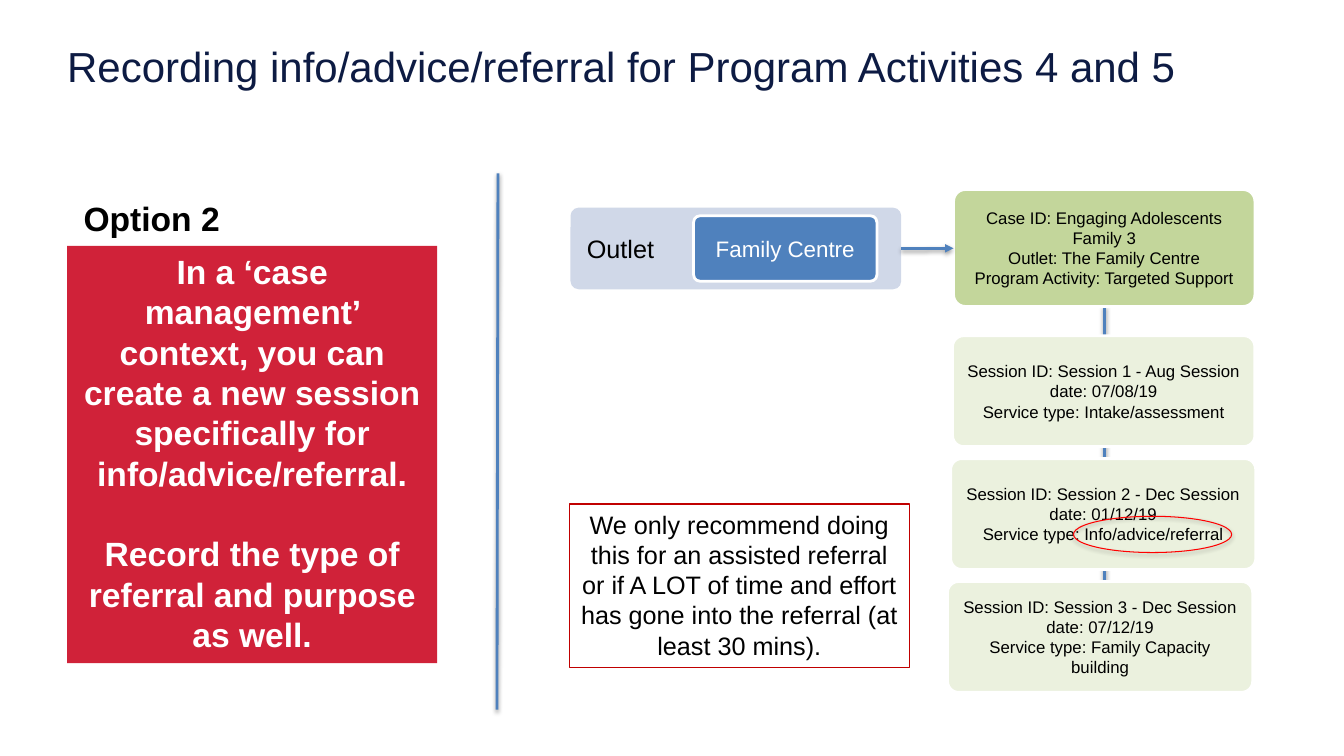
from lxml.etree import SubElement
from pptx import Presentation
from pptx.dml.color import RGBColor
from pptx.enum.shapes import MSO_CONNECTOR as CONN, MSO_SHAPE as SHAPE
from pptx.enum.text import MSO_ANCHOR as ANCHOR, PP_ALIGN as ALIGN
from pptx.oxml.ns import qn
from pptx.util import Pt

TITLE = "Recording info/advice/referral for Program Activities 4 and 5"
OPTION = "Option 2"
ADVICE = [
    "In a ‘case management’ context, you can create a new session specifically for info/advice/referral.",
    "Record the type of referral and purpose as well.",
]
NOTE = ["We only recommend doing this for an assisted referral or if A LOT of time and effort "
        "has gone into the referral (at least 30 mins)."]
CASE = ["Case ID: Engaging Adolescents Family 3", "Outlet: The Family Centre",
        "Program Activity: Targeted Support"]
SESSIONS = [
    (680.4, 216, ["Session ID: Session 1 - Aug Session date: 07/08/19",
                  "Service type: Intake/assessment"]),
    (679, 218, ["Session ID: Session 2 - Dec Session date: 01/12/19",
                "Service type: Info/advice/referral"]),
    (676.8, 218, ["Session ID: Session 3 - Dec Session date: 07/12/19",
                  "Service type: Family Capacity building"]),
]
SESSION_TOP, SESSION_STEP, SESSION_H = 239.8, 87.8, 79.2
BLUE, WHITE, BLACK = "4F81BD", "FFFFFF", "000000"
INSETS = (7.2, 3.6)


def rgb(value):
    return RGBColor.from_string(value)


def write(sp, lines, size, color=BLACK, bold=False, align=ALIGN.CENTER,
          anchor=ANCHOR.MIDDLE, insets=INSETS, gap=0):
    tf = sp.text_frame
    tf.word_wrap = True
    tf.vertical_anchor = anchor
    tf.margin_left = tf.margin_right = Pt(insets[0])
    tf.margin_top = tf.margin_bottom = Pt(insets[1])
    for i, line in enumerate(lines):
        p = tf.paragraphs[0] if i == 0 else tf.add_paragraph()
        p.text = line
        p.alignment = align
        if i and gap:
            p.space_before = Pt(gap)
        p.font.name = "Arial"
        p.font.size = Pt(size)
        p.font.bold = bold
        p.font.color.rgb = rgb(color)


def add_text(box, lines, size, **style):
    sp = s.shapes.add_textbox(*map(Pt, box))
    write(sp, lines, size, anchor=ANCHOR.TOP, align=ALIGN.LEFT, **style)


def add_box(kind, box, fill=None, line=None, width=2):
    sp = s.shapes.add_shape(kind, *map(Pt, box))
    sp.shadow.inherit = False
    if kind == SHAPE.ROUNDED_RECTANGLE:
        sp.adjustments[0] = 0.1
    if fill:
        sp.fill.solid()
        sp.fill.fore_color.rgb = rgb(fill)
    else:
        sp.fill.background()
    if line:
        sp.line.color.rgb = rgb(line)
        sp.line.width = Pt(width)
    else:
        sp.line.fill.background()
    return sp


def add_shadow(sp, alpha):
    spPr = sp._element.spPr
    effects = spPr.find(qn("a:effectLst"))
    if effects is None:
        effects = SubElement(spPr, qn("a:effectLst"))
    shadow = SubElement(effects, qn("a:outerShdw"), blurRad=str(Pt(3.1)),
                        dist=str(Pt(1.6)), dir="5400000", rotWithShape="0")
    color = SubElement(shadow, qn("a:srgbClr"), val=BLACK)
    SubElement(color, qn("a:alpha"), val=str(alpha * 1000))


def add_line(ends, kind=CONN.STRAIGHT, arrow=False):
    cx = s.shapes.add_connector(kind, *map(Pt, ends))
    cx.line.color.rgb = rgb(BLUE)
    cx.line.width = Pt(2)
    if arrow:
        SubElement(cx.line._get_or_add_ln(), qn("a:tailEnd"), type="triangle")
    add_shadow(cx, 38)


def add_card(box, fill, lines):
    sp = add_box(SHAPE.ROUNDED_RECTANGLE, box, fill, WHITE)
    write(sp, lines, 12, insets=(7, 5))


prs = Presentation()
prs.slide_width, prs.slide_height = Pt(960), Pt(540)
s = prs.slides.add_slide(prs.slide_layouts[6])

add_text((48, 28.8, 864, 47.5), [TITLE], 30, color="0D1B43", insets=(0, 0))
add_line((789.1, 218.9, 789.1, 428.4))

outlet = add_box(SHAPE.ROUNDED_RECTANGLE, (407.5, 148.3, 236.2, 58.3), "D0D8E8")
write(outlet, ["Outlet"], 18, align=ALIGN.LEFT, insets=(10, 5))
centre = add_box(SHAPE.ROUNDED_RECTANGLE, (495.4, 154.1, 131, 46.8), BLUE, WHITE)
write(centre, ["Family Centre"], 16, WHITE)

add_card((681.1, 135.4, 215.3, 83.5), "C3D69B", CASE)
for i, (left, width, lines) in enumerate(SESSIONS):
    add_card((left, SESSION_TOP + i * SESSION_STEP, width, SESSION_H), "EBF1DE", lines)

add_line((643.7, 177.7, 681.1, 177.4), CONN.ELBOW, arrow=True)
highlight = add_box(SHAPE.OVAL, (766.8, 368.8, 113, 25.9), line="FF0000", width=0.75)
add_shadow(highlight, 35)

advice = add_box(SHAPE.RECTANGLE, (48, 175.7, 264.3, 298), "D02239")
write(advice, ADVICE, 24, WHITE, bold=True, anchor=ANCHOR.TOP, gap=28.8)
note = add_box(SHAPE.RECTANGLE, (406.8, 360, 242.6, 116.6), line="C00000", width=0.75)
write(note, NOTE, 18, anchor=ANCHOR.TOP)
add_text((52.6, 138.2, 270, 36), [OPTION], 24, bold=True)
add_line((355.7, 123.8, 355, 506.9))

prs.save("out.pptx")
